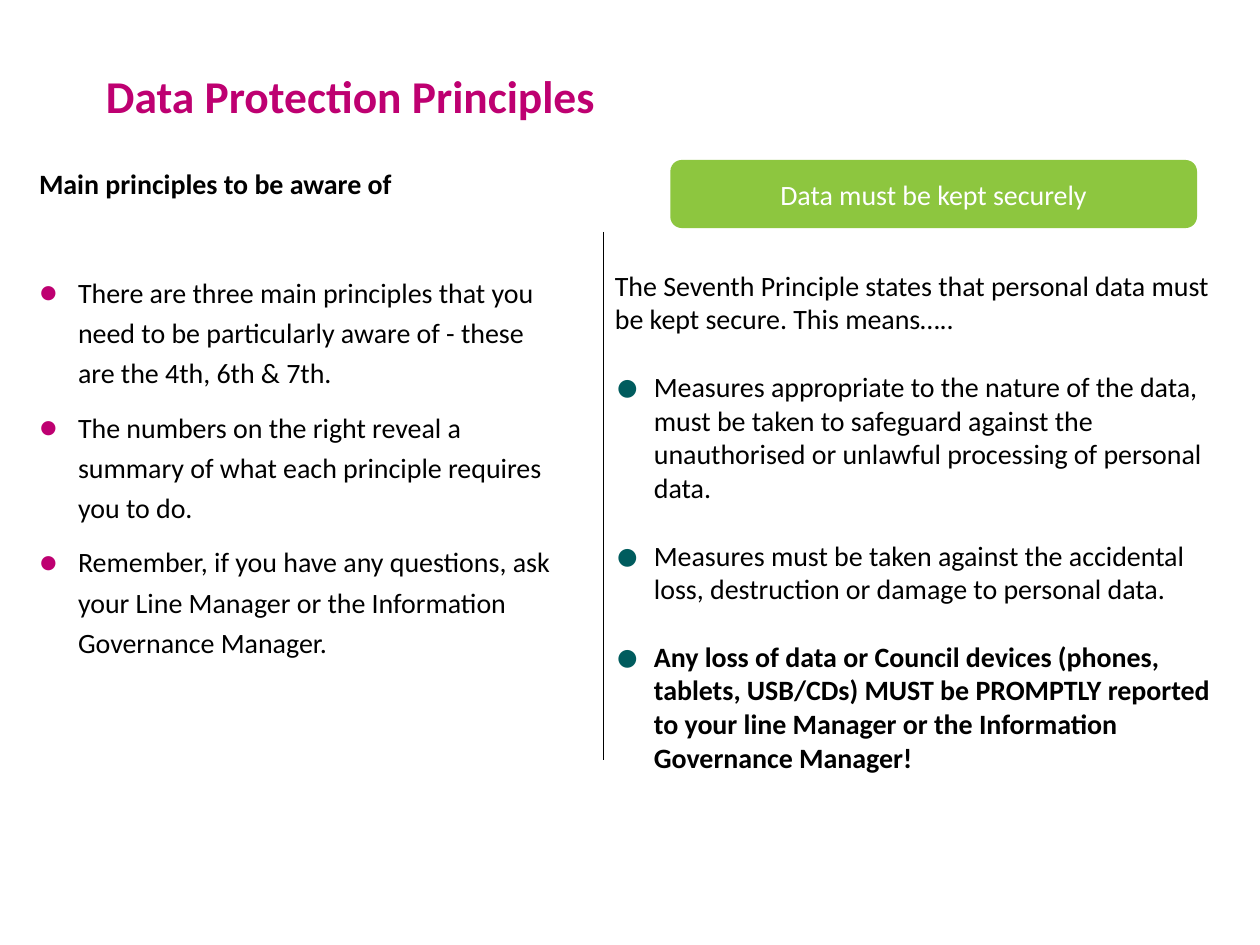
from dataclasses import dataclass

from lxml.etree import SubElement
from pptx import Presentation
from pptx.dml.color import RGBColor
from pptx.enum.shapes import MSO_CONNECTOR as Connector, MSO_SHAPE as Shape
from pptx.enum.text import MSO_ANCHOR as Anchor, MSO_AUTO_SIZE as AutoSize, PP_ALIGN as Align
from pptx.oxml.ns import qn
from pptx.util import Inches, Pt

TITLE = "Data Protection Principles"
BANNER = "Data must be kept securely"
OVERVIEW_HEADING = "Main principles to be aware of"
OVERVIEW = [
    "There are three main principles that you need to be particularly aware of - these are the 4th, 6th & 7th.",
    "The numbers on the right reveal a summary of what each principle requires you to do.",
    "Remember, if you have any questions, ask your Line Manager or the Information Governance Manager.",
]
SECURITY_INTRO = "The Seventh Principle states that personal data must be kept secure. This means….."
SECURITY = [
    ("Measures appropriate to the nature of the data, must be taken to safeguard against the "
     "unauthorised or unlawful processing of personal data.", False),
    ("Measures must be taken against the accidental loss, destruction or damage to personal data.", False),
    ("Any loss of data or Council devices (phones, tablets, USB/CDs) MUST be PROMPTLY reported "
     "to your line Manager or the Information Governance Manager!", True),
]


@dataclass(frozen=True)
class Theme:
    font: str = "Calibri"
    title_size: int = 26
    body_size: int = 16
    magenta: str = "BE0071"
    teal: str = "005C5E"
    green: str = "8DC63F"
    black: str = "000000"
    white: str = "FFFFFF"


THEME = Theme()
OVERVIEW_BULLET = ("●", THEME.magenta, 110)
SECURITY_BULLET = ("•", THEME.teal, 180)


def color(value):
    return RGBColor.from_string(value)


def box(left, top, width, height):
    return [Inches(value) for value in (left, top, width, height)]


def prepare_frame(shape, anchor=Anchor.TOP):
    frame = shape.text_frame
    frame.word_wrap = True
    frame.auto_size = AutoSize.NONE
    frame.vertical_anchor = anchor
    frame.margin_left = frame.margin_top = frame.margin_right = frame.margin_bottom = 0
    return frame


def add_bullet(paragraph, bullet):
    character, tint, percent = bullet
    properties = paragraph._p.get_or_add_pPr()
    properties.set("marL", str(Inches(0.31)))
    properties.set("indent", str(-Inches(0.31)))
    SubElement(SubElement(properties, qn("a:buClr")), qn("a:srgbClr"), val=tint)
    SubElement(properties, qn("a:buSzPct"), val=str(percent * 1000))
    SubElement(properties, qn("a:buFont"), typeface=THEME.font)
    SubElement(properties, qn("a:buChar"), char=character)


def write(frame, text, tint=THEME.black, size=THEME.body_size, bold=False,
          bullet=None, before=0, spacing=None, align=Align.LEFT):
    first = frame.paragraphs[0]
    paragraph = frame.add_paragraph() if first.runs else first
    if bullet:
        add_bullet(paragraph, bullet)
    paragraph.alignment = align
    paragraph.space_before = Pt(before)
    paragraph.line_spacing = spacing
    run = paragraph.add_run()
    run.text = text
    run.font.name = THEME.font
    run.font.size = Pt(size)
    run.font.bold = bold
    run.font.color.rgb = color(tint)


def add_divider(slide, x, top, bottom):
    divider = slide.shapes.add_connector(
        Connector.STRAIGHT, Inches(x), Inches(top), Inches(x), Inches(bottom))
    divider.line.color.rgb = color(THEME.black)
    divider.line.width = Pt(0.5)
    SubElement(divider._element.spPr, qn("a:effectLst"))


def add_banner(slide):
    banner = slide.shapes.add_shape(Shape.ROUNDED_RECTANGLE, *box(5.32, 1.27, 4.18, 0.54))
    banner.shadow.inherit = False
    banner.fill.solid()
    banner.fill.fore_color.rgb = color(THEME.green)
    banner.line.fill.background()
    write(prepare_frame(banner, Anchor.MIDDLE), BANNER, THEME.white, align=Align.CENTER)


def main():
    presentation = Presentation()
    presentation.slide_width, presentation.slide_height = Inches(10), Inches(7.5)
    slide = presentation.slides.add_slide(presentation.slide_layouts[5])

    title = slide.shapes.title
    title.left, title.top, title.width, title.height = box(0.84, 0.54, 5.34, 0.4)
    write(prepare_frame(title), TITLE, THEME.magenta, THEME.title_size, bold=True)

    overview = prepare_frame(slide.shapes.add_textbox(*box(0.31, 1.27, 4.19, 4.28)))
    write(overview, OVERVIEW_HEADING, bold=True, spacing=1.2)
    for index, text in enumerate(OVERVIEW):
        write(overview, text, bullet=OVERVIEW_BULLET, before=8 if index else 39, spacing=1.2)

    security = prepare_frame(slide.shapes.add_textbox(*box(4.88, 2.13, 4.82, 4.1)))
    write(security, SECURITY_INTRO)
    for text, bold in SECURITY:
        write(security, text, bold=bold, bullet=SECURITY_BULLET, before=19.5)

    add_divider(slide, 4.79, 1.84, 6.03)
    add_banner(slide)
    presentation.save("out.pptx")


if __name__ == "__main__":
    main()
